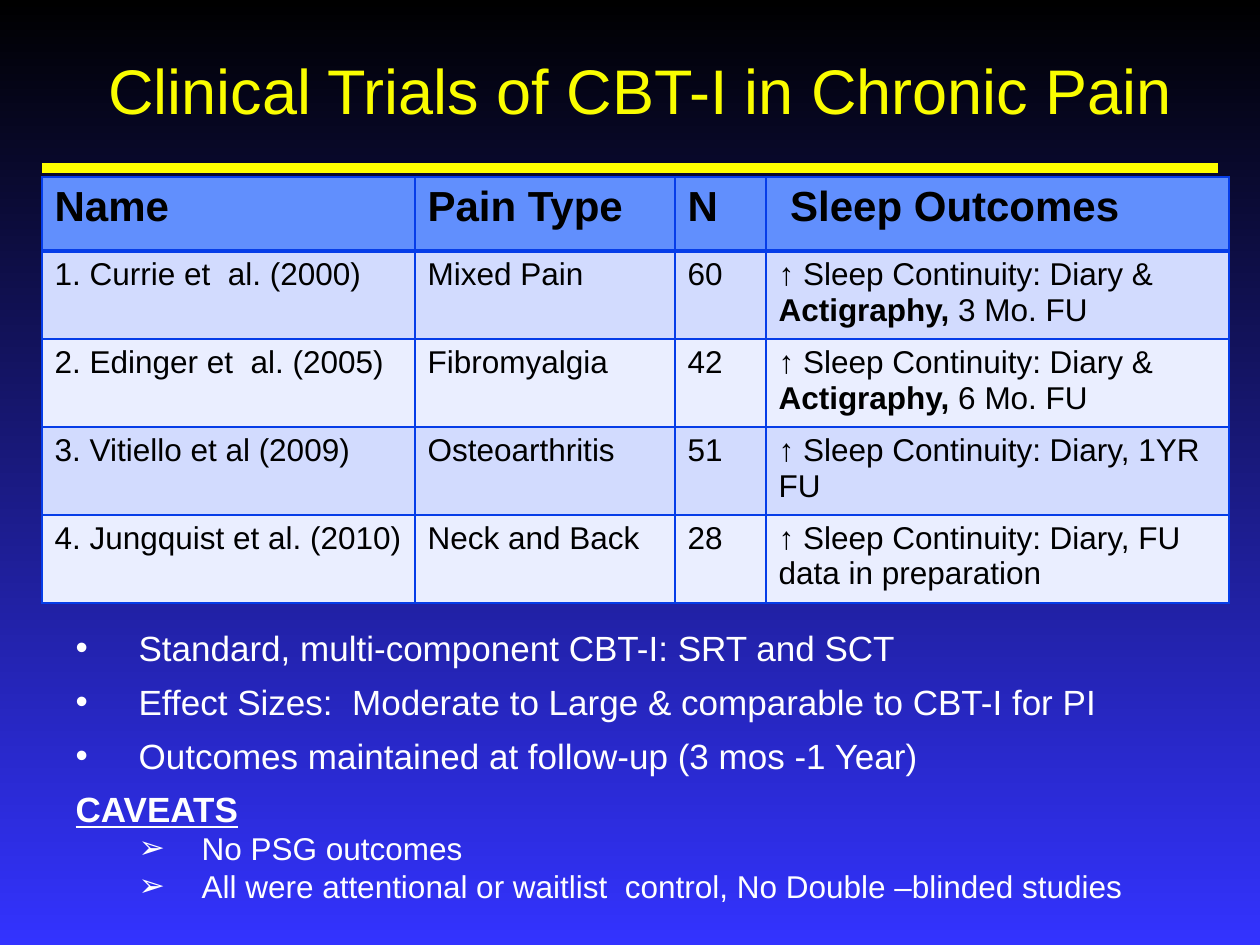
"""Build the slide on clinical trials of CBT-I in chronic pain."""
from dataclasses import dataclass

import pptx
import pptx.dml.color
import pptx.enum.shapes
import pptx.enum.text
import pptx.oxml
import pptx.oxml.ns
import pptx.util

SCALE = 914400 / 126
FONT = "Arial"
COLORS = {
    "top": "000000", "bottom": "3333FF", "title": "FAFD00", "rule": "FFFF00",
    "header": "618FFD", "odd": "D2DBFE", "even": "EAEEFF", "border": "063DE8",
    "dark": "000000", "light": "FFFFFF",
}


@dataclass(frozen=True)
class Run:
    text: str
    bold: bool = False
    underline: bool = False


@dataclass(frozen=True)
class Trial:
    name: str
    pain: str
    count: str
    outcome: tuple[Run, ...]

    def cells(self) -> list[tuple[Run, ...]]:
        return [(Run(self.name),), (Run(self.pain),), (Run(self.count),), self.outcome]


@dataclass(frozen=True)
class Point:
    run: Run
    size: int = 20
    indent: int = 63
    bullet: str = ""
    line_spacing: float = 1.0
    before: int = 0
    after: int = 0


HEADERS = ("Name", "Pain Type", "N", " Sleep Outcomes")
COLUMNS = (373, 260, 91, 463)
ROWS = (74, 88, 88, 88, 88)
DIARY = Run("↑ Sleep Continuity: Diary & ")
TRIALS = (
    Trial("1. Currie et  al. (2000)", "Mixed Pain", "60",
          (DIARY, Run("Actigraphy, ", bold=True), Run("3 Mo. FU"))),
    Trial("2. Edinger et  al. (2005)", "Fibromyalgia", "42",
          (DIARY, Run("Actigraphy,", bold=True), Run(" 6 Mo. FU"))),
    Trial("3. Vitiello et al (2009)", "Osteoarthritis", "51",
          (Run("↑ Sleep Continuity: Diary, 1YR FU"),)),
    Trial("4. Jungquist et al. (2010)", "Neck and Back", "28",
          (Run("↑ Sleep Continuity: Diary, FU data in preparation"),)),
)
FINDINGS = (
    "Standard, multi-component CBT-I: SRT and SCT",
    "Effect Sizes:  Moderate to Large & comparable to CBT-I for PI",
    "Outcomes maintained at follow-up (3 mos -1 Year)",
)
CAVEATS = (
    "No PSG outcomes",
    "All were attentional or waitlist  control, No Double –blinded studies",
)
POINTS = (
    *(Point(Run(text), bullet="•", after=7) for text in FINDINGS),
    Point(Run("CAVEATS", bold=True, underline=True), line_spacing=0.8, before=4),
    *(Point(Run(text), size=18, indent=126, bullet="➢", line_spacing=0.8, before=4)
      for text in CAVEATS),
)


def px(length: int) -> pptx.util.Emu:
    return pptx.util.Emu(round(length * SCALE))


def rgb(name: str) -> pptx.dml.color.RGBColor:
    return pptx.dml.color.RGBColor.from_string(COLORS[name])


def add_run(paragraph, content: Run, size: int, color: str) -> None:
    run = paragraph.add_run()
    run.text = content.text
    run.font.name = FONT
    run.font.size = pptx.util.Pt(size)
    run.font.bold = content.bold
    run.font.underline = content.underline
    run.font.color.rgb = rgb(color)


def place(shape, left: int, top: int, width: int, height: int) -> None:
    shape.left, shape.top = px(left), px(top)
    shape.width, shape.height = px(width), px(height)


def paint_background(slide) -> None:
    fill = slide.background.fill
    fill.gradient()
    fill.gradient_angle = 270
    for stop, color in zip(fill.gradient_stops, ("top", "bottom")):
        stop.color.rgb = rgb(color)


def fill_title(shape) -> None:
    place(shape, 84, 10, 1113, 158)
    frame = shape.text_frame
    frame.vertical_anchor = pptx.enum.text.MSO_ANCHOR.MIDDLE
    frame.auto_size = pptx.enum.text.MSO_AUTO_SIZE.NONE
    paragraph = frame.paragraphs[0]
    paragraph.alignment = pptx.enum.text.PP_ALIGN.CENTER
    add_run(paragraph, Run("Clinical Trials of CBT-I in Chronic Pain"), 36, "title")


def add_rule(slide) -> None:
    rule = slide.shapes.add_connector(
        pptx.enum.shapes.MSO_CONNECTOR.STRAIGHT, px(42), px(168), px(1218), px(168))
    rule.line.color.rgb = rgb("rule")
    rule.line.width = pptx.util.Pt(5.25)
    pptx.oxml.ns.qn("a:effectLst")
    rule._element.spPr.append(
        pptx.oxml.parse_xml(f'<a:effectLst {pptx.oxml.ns.nsdecls("a")}/>'))


def set_borders(cell, top: int, bottom: int) -> None:
    properties = cell._tc.get_or_add_tcPr()
    for side, points in (("L", 1), ("R", 1), ("T", top), ("B", bottom)):
        properties.append(pptx.oxml.parse_xml(
            f'<a:ln{side} {pptx.oxml.ns.nsdecls("a")} w="{pptx.util.Pt(points)}">'
            f'<a:solidFill><a:srgbClr val="{COLORS["border"]}"/></a:solidFill>'
            f'</a:ln{side}>'))


def add_trials_table(slide) -> None:
    table = slide.shapes.add_table(
        len(ROWS), len(COLUMNS), px(42), px(177), px(sum(COLUMNS)), px(sum(ROWS))).table
    for column, width in zip(table.columns, COLUMNS):
        column.width = px(width)
    header = [(Run(text, bold=True),) for text in HEADERS]
    contents = [header, *(trial.cells() for trial in TRIALS)]
    for index, (row, height, runs_by_cell) in enumerate(zip(table.rows, ROWS, contents)):
        row.height = px(height)
        color = "header" if index == 0 else ("even", "odd")[index % 2]
        for cell, runs in zip(row.cells, runs_by_cell):
            set_borders(cell, 3 if index == 1 else 1, 3 if index == 0 else 1)
            cell.fill.solid()
            cell.fill.fore_color.rgb = rgb(color)
            for run in runs:
                add_run(cell.text_frame.paragraphs[0], run, 18 if index else 24, "dark")


def set_bullet(paragraph, point: Point) -> None:
    properties = paragraph._p.get_or_add_pPr()
    properties.set("marL", str(px(point.indent)))
    properties.set("indent", str(px(-63)))
    namespace = pptx.oxml.ns.nsdecls("a")
    tag = f'buChar {namespace} char="{point.bullet}"' if point.bullet else f"buNone {namespace}"
    properties.append(pptx.oxml.parse_xml(f"<a:{tag}/>"))


def fill_points(shape) -> None:
    place(shape, 63, 620, 1197, 294)
    frame = shape.text_frame
    frame.word_wrap = True
    frame.auto_size = pptx.enum.text.MSO_AUTO_SIZE.NONE
    for index, point in enumerate(POINTS):
        paragraph = frame.add_paragraph() if index else frame.paragraphs[0]
        paragraph.level = 1 if point.indent > 63 else 0
        paragraph.line_spacing = point.line_spacing
        paragraph.space_before = pptx.util.Pt(point.before)
        paragraph.space_after = pptx.util.Pt(point.after)
        set_bullet(paragraph, point)
        add_run(paragraph, point.run, point.size, "light")


def main() -> None:
    presentation = pptx.Presentation()
    presentation.slide_width, presentation.slide_height = px(1260), px(945)
    slide = presentation.slides.add_slide(presentation.slide_layouts[1])
    paint_background(slide)
    fill_title(slide.shapes.title)
    add_rule(slide)
    add_trials_table(slide)
    fill_points(slide.placeholders[1])
    presentation.save("out.pptx")


if __name__ == "__main__":
    main()
